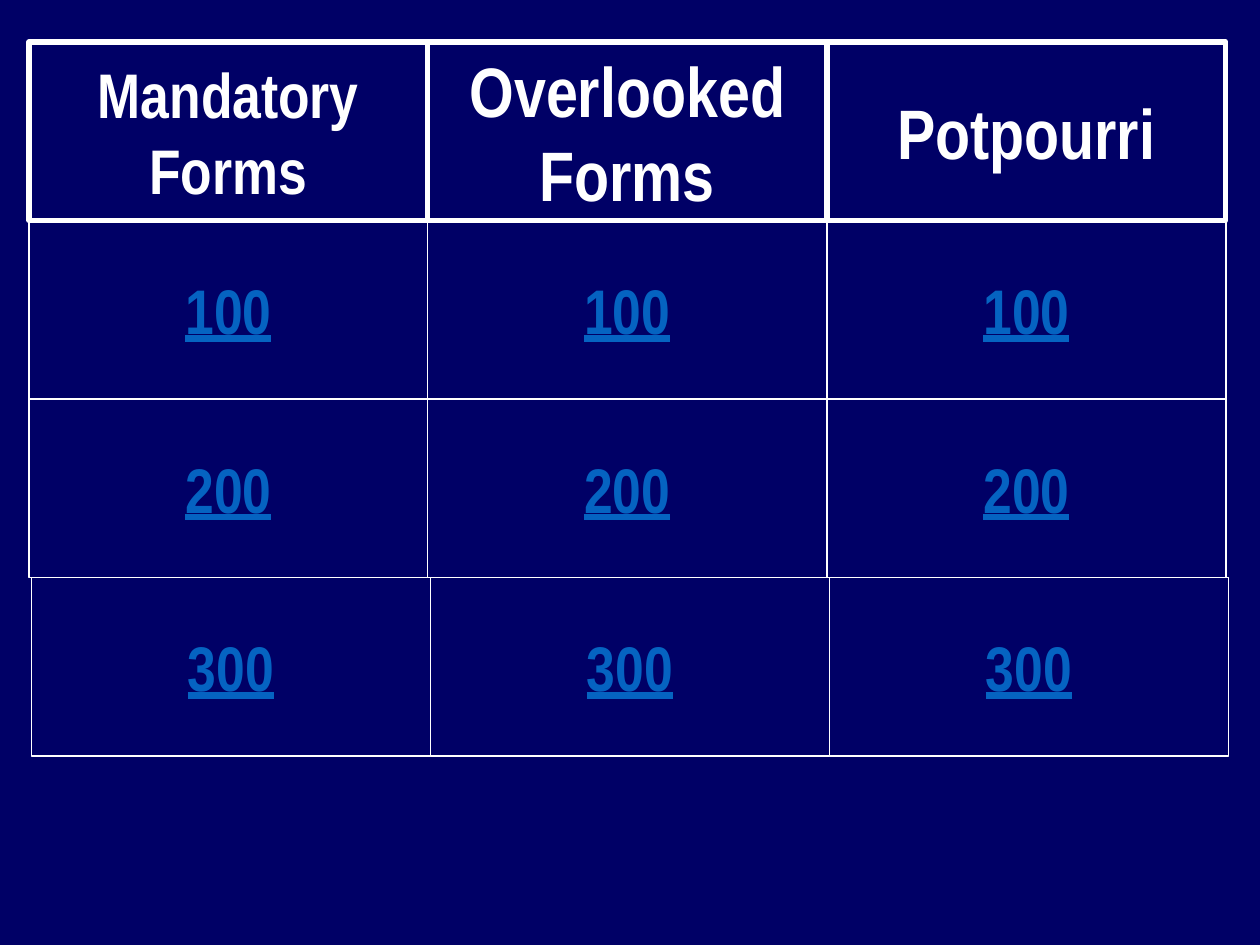
from pptx import Presentation
from pptx.dml.color import RGBColor
from pptx.enum.shapes import MSO_SHAPE as Shape
from pptx.enum.text import MSO_ANCHOR as Anchor, PP_ALIGN as Align
from pptx.util import Emu, Pt

PX = 9525  # 96 px to the inch
NAVY, WHITE, LINK_BLUE = "000066", "FFFFFF", "0563C1"
CELL_WIDTH, CELL_HEIGHT = 304, 136

# Lines of each category and their text size
CATEGORIES = [
    (["Mandatory", "Forms"], 36),
    (["Overlooked", "Forms"], 40),
    (["Potpourri"], 40),
]
# Point value and sideways shift of each row
POINT_ROWS = [("100", 0), ("200", 0), ("300", 2)]


def px(length):
    return Emu(length * PX)


def color(value):
    return RGBColor.from_string(value)


def add_cell(page, kind, left, top, lines, border, size, text_color, underline=False):
    box = page.shapes.add_shape(
        kind, px(left), px(top), px(CELL_WIDTH), px(CELL_HEIGHT))
    box.shadow.inherit = False
    box.fill.solid()
    box.fill.fore_color.rgb = color(NAVY)
    box.line.color.rgb = color(WHITE)
    box.line.width = Pt(border)

    frame = box.text_frame
    frame.word_wrap = False
    frame.vertical_anchor = Anchor.MIDDLE
    font_format = {"name": "Arial Narrow", "size": Pt(size),
                   "bold": True, "underline": underline}
    for index, line in enumerate(lines):
        para = frame.paragraphs[0] if index == 0 else frame.add_paragraph()
        para.alignment = Align.CENTER
        span = para.add_run()
        span.text = line
        for name, value in font_format.items():
            setattr(span.font, name, value)
        span.font.color.rgb = color(text_color)


def add_point_grid(page, left, top):
    for row, (points, shift) in enumerate(POINT_ROWS):
        for column in range(len(CATEGORIES)):
            add_cell(page, Shape.ACTION_BUTTON_CUSTOM,
                     left + shift + column * CELL_WIDTH, top + row * CELL_HEIGHT,
                     [points], 0.75, 36, LINK_BLUE, underline=True)


def add_category_header(page, left, top):
    for column, (lines, size) in enumerate(CATEGORIES):
        add_cell(page, Shape.RECTANGLE, left + column * CELL_WIDTH, top,
                 lines, 3, size, WHITE)


def main():
    deck = Presentation()
    deck.slide_width, deck.slide_height = px(960), px(720)
    page = deck.slides.add_slide(deck.slide_layouts[6])
    page.background.fill.solid()
    page.background.fill.fore_color.rgb = color(NAVY)

    # The header comes last so its thick border lies over the grid
    board_left, board_top = 22, 32
    add_point_grid(page, board_left, board_top + CELL_HEIGHT)
    add_category_header(page, board_left, board_top)
    deck.save("out.pptx")


if __name__ == "__main__":
    main()
